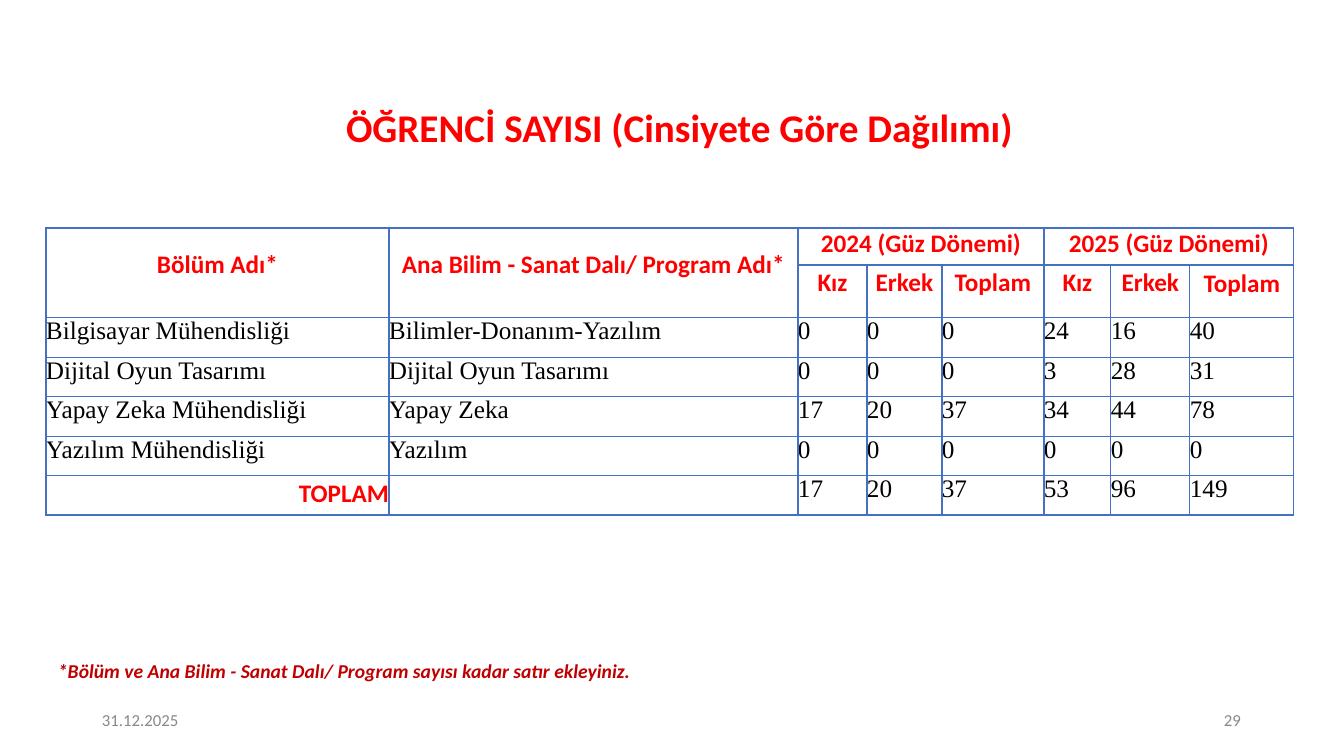
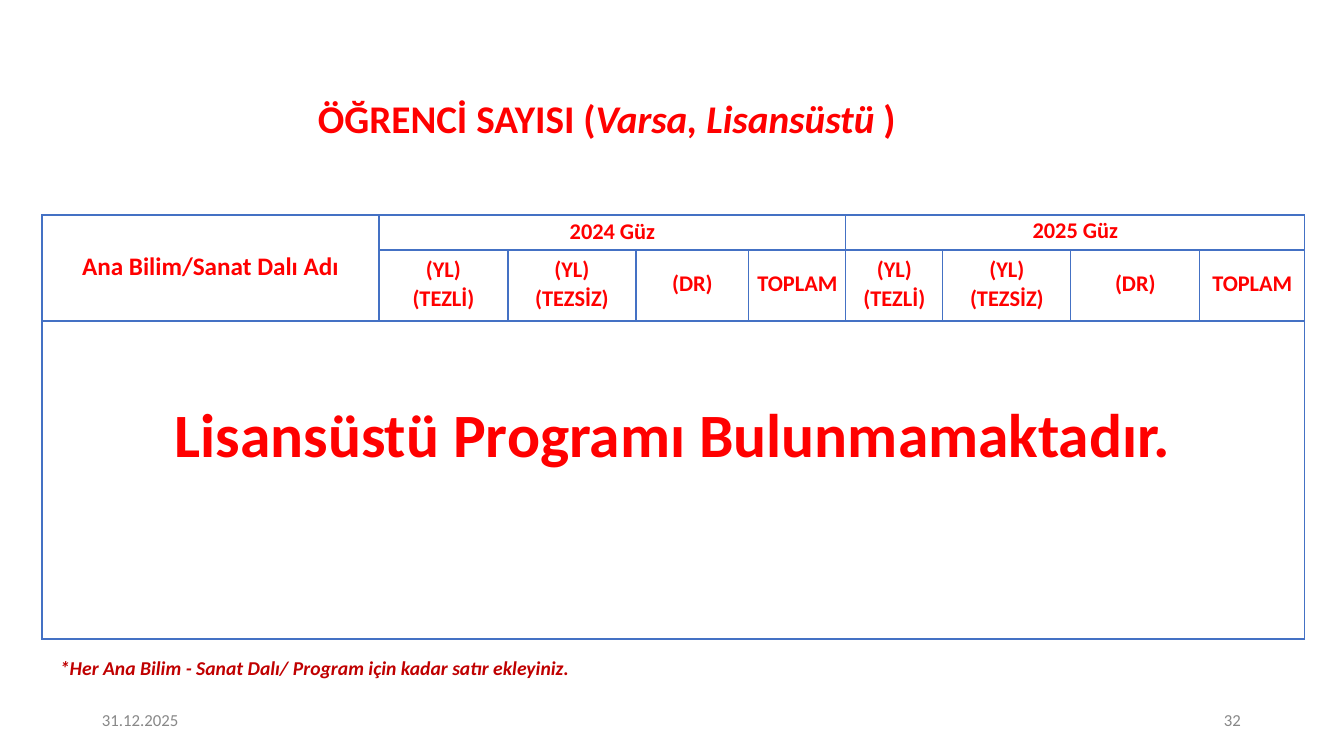
from lxml.etree import SubElement
from pptx import Presentation
from pptx.dml.color import RGBColor
from pptx.enum.text import MSO_ANCHOR, MSO_AUTO_SIZE, PP_ALIGN
from pptx.oxml import parse_xml
from pptx.oxml.ns import nsdecls
from pptx.util import Emu, Pt

HUES = {"red": "FF0000", "dark": "C00000", "gray": "888888", "black": "000000", "blue": "4471C4"}
SIDES = {"left": PP_ALIGN.LEFT, "mid": PP_ALIGN.CENTER, "right": PP_ALIGN.RIGHT}
SCALE = 914400 / 100.8


def px(count):
    return Emu(round(count * SCALE))


def write(frame, text, size=18, hue="red", font="Calibri", bold=True, slant=False,
          side="left", left=0, top=0, space=None, wrap=True):
    frame.margin_left, frame.margin_top = px(left), px(top)
    frame.margin_right = frame.margin_bottom = 0
    frame.word_wrap = wrap
    frame.vertical_anchor = MSO_ANCHOR.TOP
    for index, line in enumerate(text.split("\n")):
        para = frame.add_paragraph() if index else frame.paragraphs[0]
        para.alignment = SIDES[side]
        para.line_spacing = space
        for turn, part in enumerate(line.split("|")):
            run = para.add_run()
            run.text = part
            run.font.size = Pt(size)
            run.font.name = font
            run.font.bold = bold
            run.font.italic = slant != (turn % 2 == 1)
            run.font.color.rgb = RGBColor.from_string(HUES[hue])


terms = ["Kız", "Erkek", "Toplam"]
lines = [
    ["Bilgisayar Mühendisliği", "Bilimler-Donanım-Yazılım", 0, 0, 0, 24, 16, 40],
    ["Dijital Oyun Tasarımı", "Dijital Oyun Tasarımı", 0, 0, 0, 3, 28, 31],
    ["Yapay Zeka Mühendisliği", "Yapay Zeka", 17, 20, 37, 34, 44, 78],
    ["Yazılım Mühendisliği", "Yazılım", 0, 0, 0, 0, 0, 0],
    ["TOPLAM", "", 17, 20, 37, 53, 96, 149],
]
plain = dict(hue="black", font="Times New Roman", bold=False)
total = dict(side="right", top=3)
first = [
    (0, 0, 2, 1, "Bölüm Adı*", dict(side="mid", top=22)),
    (0, 1, 2, 1, "Ana Bilim - Sanat Dalı/ Program Adı*", dict(side="mid", top=22)),
    (0, 2, 1, 3, "2024 (Güz Dönemi)", dict(side="mid", top=1)),
    (0, 5, 1, 3, "2025 (Güz Dönemi)", dict(side="mid", top=1)),
]
for col, term in enumerate(terms * 2, 2):
    first.append((1, col, 1, 1, term, dict(side="mid", top=4 if col == 7 else 3)))
for row, line in enumerate(lines, 2):
    for col, value in enumerate(line):
        look = total if value == "TOPLAM" else plain
        if value != "":
            first.append((row, col, 1, 1, str(value), look))

grades = ["(YL)\n(TEZLİ)", "(YL)\n(TEZSİZ)", "(DR)", "TOPLAM"]
second = [
    (0, 0, 2, 1, "Ana Bilim/Sanat Dalı Adı", dict(side="mid", top=36)),
    (0, 1, 1, 4, "2024 Güz", dict(size=16, side="mid", top=3)),
    (0, 5, 1, 4, "2025 Güz", dict(size=16, side="mid", top=2)),
    (2, 0, 1, 9, "Lisansüstü Programı Bulunmamaktadır.", dict(size=44, side="mid", top=78)),
]
for col, grade in enumerate(grades * 2, 1):
    tall = "\n" in grade
    look = dict(size=16, side="mid", top=4 if tall else 20, space=1.07 if tall else None)
    second.append((1, col, 1, 1, grade, look))

pages = [
    dict(title="ÖĞRENCİ SAYISI (Cinsiyete Göre Dağılımı)", left=310, top=38, number="29",
         note="*Bölüm ve Ana Bilim - Sanat Dalı/ Program sayısı kadar satır ekleyiniz.",
         place=(57, 658, 575, 26), start=(46, 228), cells=first,
         cols=[343, 409, 69, 75, 102, 67, 79, 104], rows=[37, 52, 40, 39, 40, 39, 40]),
    dict(title="ÖĞRENCİ SAYISI (|Varsa, Lisansüstü |)", left=282, top=29, number="32",
         note="*Her Ana Bilim - Sanat Dalı/ Program için kadar satır ekleyiniz.",
         place=(59, 655, 511, 26), start=(42, 215), cells=second,
         cols=[337, 129, 128, 113, 97, 97, 128, 129, 105], rows=[35, 71, 318]),
]

deck = Presentation()
deck.slide_width, deck.slide_height = px(1344), px(756)

for page in pages:
    slide = deck.slides.add_slide(deck.slide_layouts[5])
    title = slide.shapes.title
    title.left, title.top, title.width, title.height = map(px, (36, 65, 1151, 105))
    title.text_frame.auto_size = MSO_AUTO_SIZE.NONE
    write(title.text_frame, page["title"], size=28, left=page["left"], top=page["top"])

    foot = dict(size=12, hue="gray", bold=False, space=Pt(12.4), wrap=False)
    texts = [
        ((101, 713, 80, 20), "31.12.2025", dict(foot, left=1)),
        ((1220, 713, 27, 20), page["number"], dict(foot, left=4)),
        (page["place"], page["note"],
         dict(size=14, hue="dark", slant=True, left=1, top=1, wrap=False)),
    ]
    for place, text, look in texts:
        box = slide.shapes.add_textbox(*map(px, place))
        write(box.text_frame, text, **look)

    cols, rows = page["cols"], page["rows"]
    size = (*page["start"], sum(cols), sum(rows))
    table = slide.shapes.add_table(len(rows), len(cols), *map(px, size)).table
    table.first_row = table.horz_banding = False
    for col, width in zip(table.columns, cols):
        col.width = px(width)
    for row, height in zip(table.rows, rows):
        row.height = px(height)
    for cell in table.iter_cells():
        cell.margin_left = cell.margin_right = cell.margin_top = cell.margin_bottom = 0
        cell.fill.background()
        props = cell._tc.get_or_add_tcPr()
        for index, edge in enumerate("LRTB"):
            rule = parse_xml(f'<a:ln{edge} {nsdecls("a")} w="{Pt(1)}"/>')
            fill = SubElement(rule, f'{{{rule.nsmap["a"]}}}solidFill')
            SubElement(fill, f'{{{rule.nsmap["a"]}}}srgbClr', val=HUES["blue"])
            props.insert(index, rule)
    for row, col, down, over, text, look in page["cells"]:
        cell = table.cell(row, col)
        if down * over > 1:
            cell.merge(table.cell(row + down - 1, col + over - 1))
        cell.margin_top = px(look.get("top", 0))
        write(cell.text_frame, text, **dict(look, top=0))

deck.save("out.pptx")
